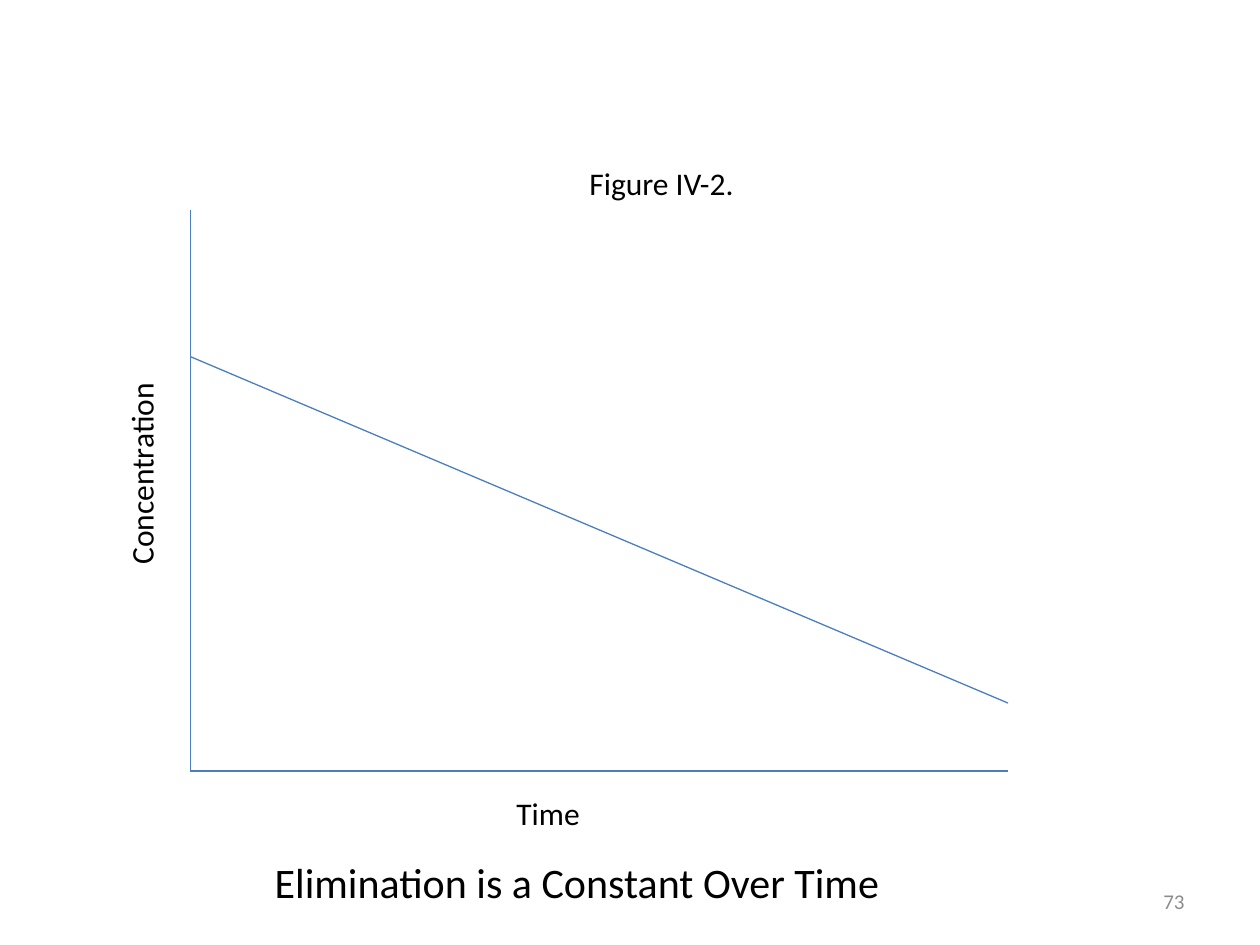
from lxml import etree
from pptx import Presentation
from pptx.dml.color import RGBColor
from pptx.enum.shapes import MSO_CONNECTOR
from pptx.enum.text import MSO_ANCHOR, MSO_AUTO_SIZE, PP_ALIGN
from pptx.oxml.ns import qn
from pptx.util import Inches, Pt

STRAIGHT = MSO_CONNECTOR.STRAIGHT
TOP, MIDDLE = MSO_ANCHOR.TOP, MSO_ANCHOR.MIDDLE
LEFT, RIGHT = PP_ALIGN.LEFT, PP_ALIGN.RIGHT
NO_AUTOFIT = MSO_AUTO_SIZE.NONE

FONT = "Calibri"
BLACK, GREY, BLUE = "000000", "8C8C8C", "4B7EBC"
AXIS_LEFT, AXIS_RIGHT = 1.51, 8
AXIS_TOP, AXIS_BOTTOM = 1.67, 6.12
LINE_START, LINE_END = 2.83, 5.58


def color(hex_code):
    """Return the colour for a hex string."""
    return RGBColor.from_string(hex_code)


def write_text(box, text, size, hex_code=BLACK, align=LEFT, anchor=TOP, wrap=False):
    """Write one formatted line of text into a box."""
    frame = box.text_frame
    frame.auto_size = NO_AUTOFIT
    frame.word_wrap = wrap
    frame.vertical_anchor = anchor
    para = frame.paragraphs[0]
    para.alignment = align
    span = para.add_run()
    span.text = text
    span.font.name = FONT
    span.font.size = Pt(size)
    span.font.color.rgb = color(hex_code)


def add_label(page, text, left, top, width, size=18, **style):
    """Add a one-line text box and return it."""
    box = page.shapes.add_textbox(
        Inches(left), Inches(top), Inches(width), Inches(0.4))
    write_text(box, text, size, **style)
    return box


def add_line(page, start, end):
    """Add a thin straight line between two points."""
    line = page.shapes.add_connector(
        STRAIGHT, *(Inches(value) for value in (*start, *end)))
    line.line.color.rgb = color(BLUE)
    line.line.width = Pt(0.75)
    etree.SubElement(line._element.spPr, qn("a:effectLst"))


def place_title(page, text):
    """Move the title placeholder below the graph and fill it."""
    title = page.shapes.title
    title.left, title.top = Inches(2.08), Inches(6.75)
    title.width, title.height = Inches(6.08), Inches(0.6)
    write_text(title, text, 24, wrap=True)


def main():
    """Build the slide and save the deck."""
    deck = Presentation()
    deck.slide_width, deck.slide_height = Inches(10), Inches(7.5)
    page = deck.slides.add_slide(deck.slide_layouts[5])

    origin = (AXIS_LEFT, AXIS_BOTTOM)
    add_line(page, origin, (AXIS_LEFT, AXIS_TOP))
    add_line(page, origin, (AXIS_RIGHT, AXIS_BOTTOM))
    add_line(page, (AXIS_LEFT, LINE_START), (AXIS_RIGHT, LINE_END))

    add_label(page, "Concentration", 0.29, 3.55, 1.66).rotation = 270
    add_label(page, "Time", 4, 6.25, 0.71)
    add_label(page, "Figure IV-2.", 4.58, 1.25, 1.37)
    place_title(page, "Elimination is a Constant Over Time")
    add_label(page, "73", 7.17, 6.95, 2.33, size=12, hex_code=GREY,
              align=RIGHT, anchor=MIDDLE, wrap=True)

    deck.save("out.pptx")


if __name__ == "__main__":
    main()
